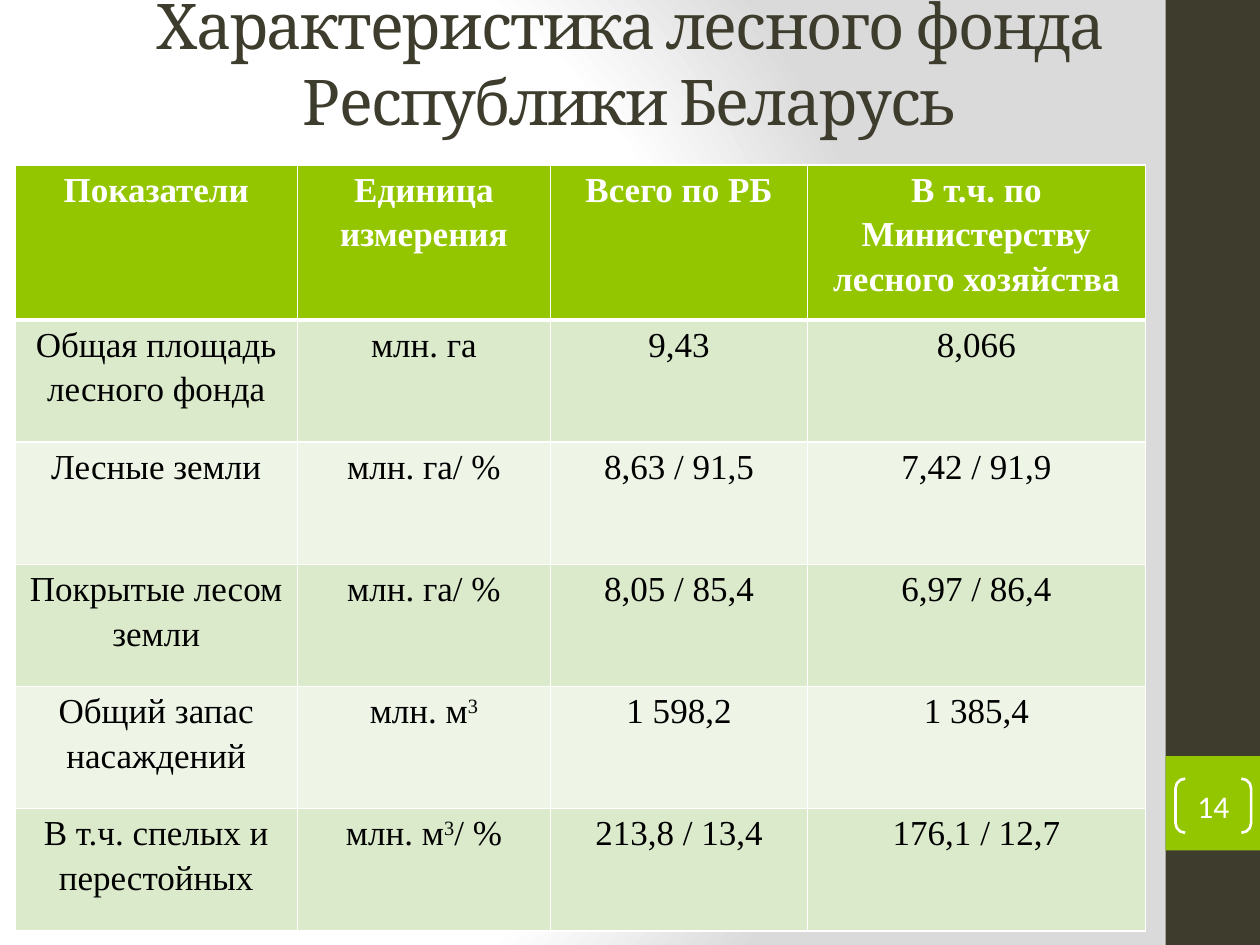
from lxml import etree
from pptx import Presentation
from pptx import util as u
from pptx.dml.color import RGBColor
from pptx.enum import shapes, text
from pptx.oxml import parse_xml
from pptx.oxml.ns import nsdecls, qn

DARK, GREEN, WHITE, BLACK = "3E3D2D", "94C600", "FFFFFF", "000000"
BANDS = ("DCEACC", "EEF5E7")

COLUMNS = (2.24, 2.01, 2.04, 2.68)
HEADER_HEIGHT, ROW_HEIGHT = 1.23, 0.97
# Text between ^ marks is superscript
ROWS = (
    ("Показатели", "Единица измерения", "Всего по РБ",
     "В т.ч. по Министерству лесного хозяйства"),
    ("Общая площадь лесного фонда", "млн. га", "9,43", "8,066"),
    ("Лесные земли", "млн. га/ %", "8,63 / 91,5", "7,42 / 91,9"),
    ("Покрытые лесом земли", "млн. га/ %", "8,05 / 85,4", "6,97 / 86,4"),
    ("Общий запас насаждений", "млн. м^3^", "1 598,2", "1 385,4"),
    ("В т.ч. спелых и перестойных", "млн. м^3^/ %", "213,8 / 13,4", "176,1 / 12,7"),
)


def color(value):
    return RGBColor.from_string(value)


def inches(*values):
    return [u.Inches(value) for value in values]


class SlideBuilder:
    title_format = {"name": "Cambria", "size": u.Pt(36), "bold": False}
    table_format = {"name": "Times New Roman", "size": u.Pt(20)}
    number_format = {"name": "Calibri", "size": u.Pt(18)}

    def __init__(self, page):
        self.page = page

    def background(self, stops):
        stop_xml = "".join(
            f'<a:gs pos="{place * 1000}"><a:srgbClr val="{value}"/></a:gs>'
            for place, value in stops)
        fill = parse_xml(
            f'<p:bg {nsdecls("p", "a")}><p:bgPr><a:gradFill rotWithShape="1">'
            f'<a:gsLst>{stop_xml}</a:gsLst><a:path path="circle">'
            '<a:fillToRect l="20000" t="50000" r="100000" b="50000"/></a:path>'
            '</a:gradFill><a:effectLst/></p:bgPr></p:bg>')
        self.page._element.cSld.insert(0, fill)

    def centred_text(self, frame, words, style, ink, spacing=None):
        """Centre one paragraph, raising the parts between ^ marks."""
        para = frame.paragraphs[0]
        para.alignment = text.PP_ALIGN.CENTER
        para.line_spacing = spacing
        for index, part in enumerate(words.split("^")):
            if not part:
                continue
            span = para.add_run()
            span.text = part
            for name, value in style.items():
                setattr(span.font, name, value)
            span.font.color.rgb = color(ink)
            if index % 2:
                span._r.get_or_add_rPr().set("baseline", "30000")
        return para

    def margins(self, target, side):
        values = {"margin_left": side, "margin_right": side,
                  "margin_top": 0, "margin_bottom": 0}
        for name, value in values.items():
            setattr(target, name, u.Inches(value))

    def shape(self, kind, place, fill=None, line=None):
        box = self.page.shapes.add_shape(kind, *inches(*place))
        box.shadow.inherit = False
        if fill:
            box.fill.solid()
            box.fill.fore_color.rgb = color(fill)
        else:
            box.fill.background()
        if line:
            box.line.color.rgb = color(line)
            box.line.width = u.Pt(1.5)
        else:
            box.line.fill.background()
        return box

    def title(self, words, place):
        box = self.page.shapes.title
        box.left, box.top, box.width, box.height = inches(*place)
        frame = box.text_frame
        frame.word_wrap = True
        frame.auto_size = text.MSO_AUTO_SIZE.NONE
        frame.vertical_anchor = text.MSO_ANCHOR.MIDDLE
        para = self.centred_text(frame, words, self.title_format, DARK)
        for span in para.runs:
            span._r.get_or_add_rPr().set("spc", "-100")
        # Keep the title in front of the side bar
        self.page.shapes._spTree.append(box._element)

    def number(self, words, place):
        box = self.shape(shapes.MSO_SHAPE.DOUBLE_BRACKET, place, line=WHITE)
        box.adjustments[0] = 0.179
        frame = box.text_frame
        self.margins(frame, 0)
        frame.vertical_anchor = text.MSO_ANCHOR.MIDDLE
        self.centred_text(frame, words, self.number_format, WHITE)

    def borders(self, cell, widths):
        props = cell._tc.get_or_add_tcPr()
        for side, width in widths.items():
            line = etree.SubElement(props, qn(f"a:ln{side}"), w=str(u.Pt(width)))
            fill = etree.SubElement(line, qn("a:solidFill"))
            etree.SubElement(fill, qn("a:srgbClr"), val=WHITE)

    def table(self, rows, left, top):
        heights = [HEADER_HEIGHT] + [ROW_HEIGHT] * (len(rows) - 1)
        grid = self.page.shapes.add_table(
            len(rows), len(COLUMNS),
            *inches(left, top, sum(COLUMNS), sum(heights))).table
        grid.horz_banding = False
        for column, width in zip(grid.columns, COLUMNS):
            column.width = u.Inches(width)
        for index, (row, height) in enumerate(zip(grid.rows, heights)):
            row.height = u.Inches(height)
            header = index == 0
            fill = GREEN if header else BANDS[(index - 1) % 2]
            style = {**self.table_format, "bold": header}
            widths = {"L": 1, "R": 1, "T": 3 if index == 1 else 1,
                      "B": 3 if header else 1}
            for cell, words in zip(row.cells, rows[index]):
                self.margins(cell, 0.07)
                self.borders(cell, widths)
                cell.fill.solid()
                cell.fill.fore_color.rgb = color(fill)
                self.centred_text(cell.text_frame, words, style,
                                  WHITE if header else BLACK, 1.15)


def main():
    deck = Presentation()
    deck.slide_width, deck.slide_height = inches(10, 7.5)
    builder = SlideBuilder(deck.slides.add_slide(deck.slide_layouts[5]))

    # Background and side bar
    builder.background([(0, WHITE), (75, WHITE), (100, "DADADA")])
    builder.shape(shapes.MSO_SHAPE.RECTANGLE, (9.25, 0, 0.75, 7.5), DARK)
    builder.shape(shapes.MSO_SHAPE.RECTANGLE, (9.25, 6, 0.75, 0.75), GREEN)

    # Title, table and page number
    builder.title("Характеристика лесного фонда Республики Беларусь",
                  (0.5, 0, 9, 0.99))
    builder.table(ROWS, 0.12, 1.31)
    builder.number("14", (9.33, 6.18, 0.6, 0.43))

    deck.save("out.pptx")


if __name__ == "__main__":
    main()
